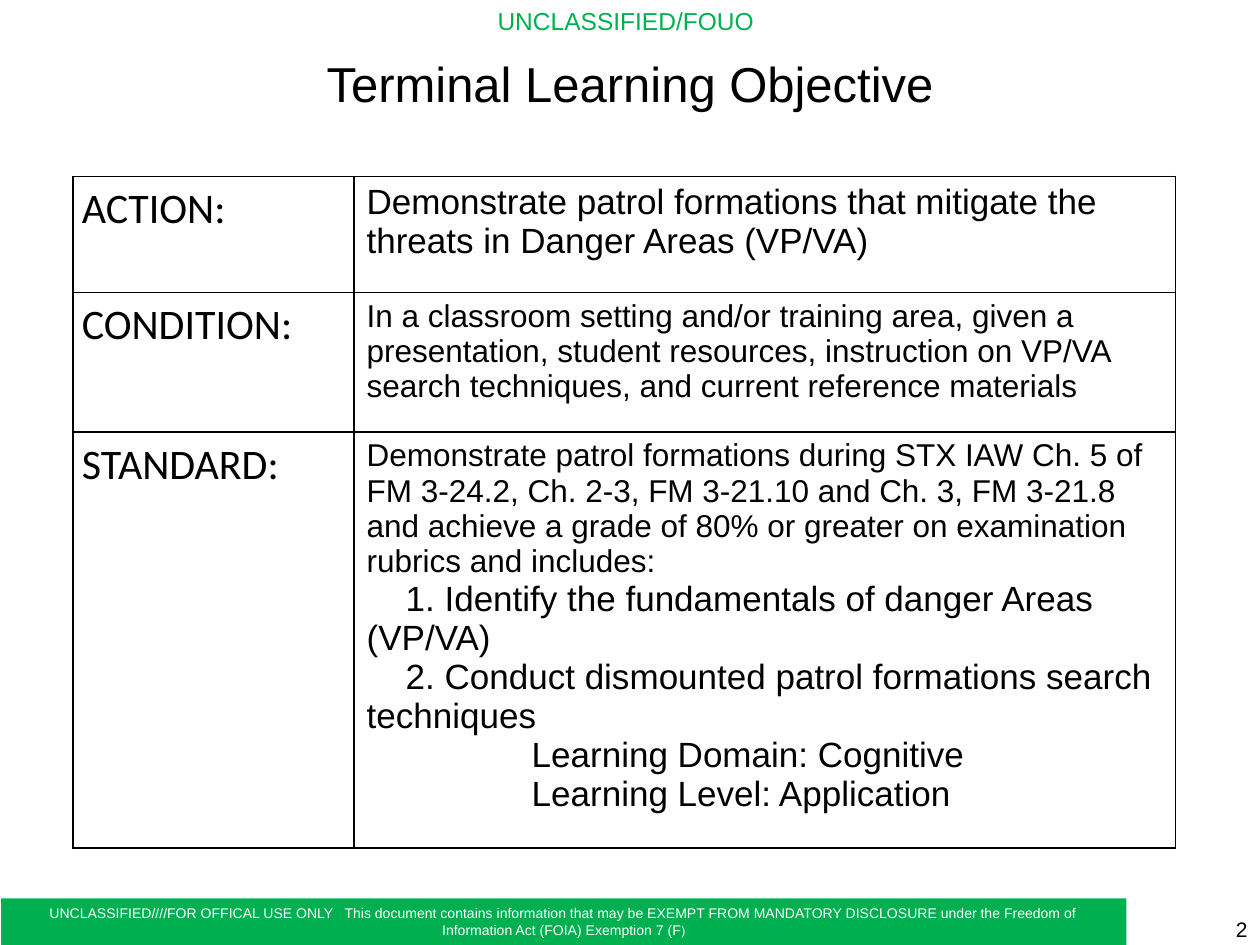
"""Build the Terminal Learning Objective slide with its action, condition and standard table."""
from lxml import etree
from pptx import Presentation
from pptx.dml.color import RGBColor
from pptx.enum.shapes import MSO_SHAPE
from pptx.enum.text import MSO_ANCHOR, PP_ALIGN
from pptx.oxml.ns import qn
from pptx.util import Inches, Pt

RECTANGLE = MSO_SHAPE.RECTANGLE
TOP, MIDDLE = MSO_ANCHOR.TOP, MSO_ANCHOR.MIDDLE
LEFT, CENTER, RIGHT = PP_ALIGN.LEFT, PP_ALIGN.CENTER, PP_ALIGN.RIGHT
GREEN, BLACK, WHITE = "00B050", "000000", "FFFFFF"


def color(value):
    return RGBColor.from_string(value)


def add_run(paragraph, text, size, ink=BLACK, face="Arial"):
    run = paragraph.add_run()
    run.text = text
    formats = {"name": face, "size": Pt(size)}
    for key, value in formats.items():
        setattr(run.font, key, value)
    run.font.color.rgb = color(ink)


prs = Presentation()
prs.slide_width, prs.slide_height = Inches(10), Inches(7.5)
slide = prs.slides.add_slide(prs.slide_layouts[6])

labels = [
    ("UNCLASSIFIED/FOUO", (3.85, 0, 2.29, 0.34), 14, GREEN, LEFT, TOP, False),
    ("2", (7.67, 7.25, 2.33, 0.25), 12, BLACK, RIGHT, MIDDLE, True),
    ("Terminal Learning Objective", (0.5, 0.3, 9, 0.72), 28, BLACK, CENTER, MIDDLE, True),
]
for text, place, size, ink, align, anchor, wrap in labels:
    frame = slide.shapes.add_textbox(*map(Inches, place)).text_frame
    for key, value in {"word_wrap": wrap, "vertical_anchor": anchor}.items():
        setattr(frame, key, value)
    frame.paragraphs[0].alignment = align
    add_run(frame.paragraphs[0], text, size, ink)

disclosure = slide.shapes.add_shape(RECTANGLE, Inches(0.01), Inches(7.13), Inches(8.93), Inches(0.37))
disclosure.shadow.inherit = False
disclosure.fill.solid()
disclosure.fill.fore_color.rgb = color(GREEN)
disclosure.line.fill.background()
disclosure.text_frame.word_wrap = True
disclosure.text_frame.vertical_anchor = TOP
notice = disclosure.text_frame.paragraphs[0]
notice.alignment = CENTER
add_run(notice, "UNCLASSIFIED////FOR OFFICAL USE ONLY   This document contains information that may be "
        "EXEMPT FROM MANDATORY DISCLOSURE under the Freedom of Information Act (FOIA) Exemption 7 (F", 8, WHITE)
add_run(notice, ")", 7, WHITE)

# Each entry: label, row height, paragraphs as (text, size, first-line indent)
objectives = [
    ("ACTION:", 0.92, [
        ("Demonstrate patrol formations that mitigate the threats in Danger Areas (VP/VA)", 20, 0)]),
    ("CONDITION:", 1.11, [
        ("In a classroom setting and/or training area, given a presentation, student resources, "
         "instruction on VP/VA search techniques, and current reference materials", 18, 0)]),
    ("STANDARD:", 3.08, [
        ("Demonstrate patrol formations during STX IAW Ch. 5 of FM 3-24.2, Ch. 2-3, FM 3-21.10 and "
         "Ch. 3, FM 3-21.8 and achieve a grade of 80% or greater on examination rubrics and includes:", 18, 0),
        ("1. Identify the fundamentals of danger Areas (VP/VA)", 20, 0.31),
        ("2. Conduct dismounted patrol formations search techniques", 20, 0.31),
        ("Learning Domain: Cognitive", 20, 1.31),
        ("Learning Level: Application", 20, 1.31)]),
]
table = slide.shapes.add_table(3, 2, Inches(0.58), Inches(1.4), Inches(8.75), Inches(5.11)).table
table.first_row = table.horz_banding = False
for column, width in zip(table.columns, (2.23, 6.52)):
    column.width = Inches(width)

label_margins = {"margin_left": 0.07, "margin_right": 0.07, "margin_top": 0, "margin_bottom": 0}
for row, (label, height, details) in enumerate(objectives):
    table.rows[row].height = Inches(height)
    label_cell, detail_cell = table.cell(row, 0), table.cell(row, 1)
    for key, value in label_margins.items():
        setattr(label_cell, key, Inches(value))
    heading = label_cell.text_frame.paragraphs[0]
    heading.line_spacing = 1.15
    add_run(heading, label, 24, face="Calibri")

    for index, (text, size, indent) in enumerate(details):
        frame = detail_cell.text_frame
        detail = frame.add_paragraph() if index else frame.paragraphs[0]
        if indent:
            properties = detail._p.get_or_add_pPr()
            properties.set("marL", "0")
            properties.set("indent", str(Inches(indent)))
        add_run(detail, text, size)

    for cell in (label_cell, detail_cell):
        borders = cell._tc.get_or_add_tcPr()
        for side in ("a:lnL", "a:lnR", "a:lnT", "a:lnB"):
            border = etree.SubElement(borders, qn(side), w=str(Pt(1)))
            ink = etree.SubElement(border, qn("a:solidFill"))
            etree.SubElement(ink, qn("a:srgbClr"), val=BLACK)
        cell.fill.solid()
        cell.fill.fore_color.rgb = color(WHITE)

prs.save("out.pptx")
